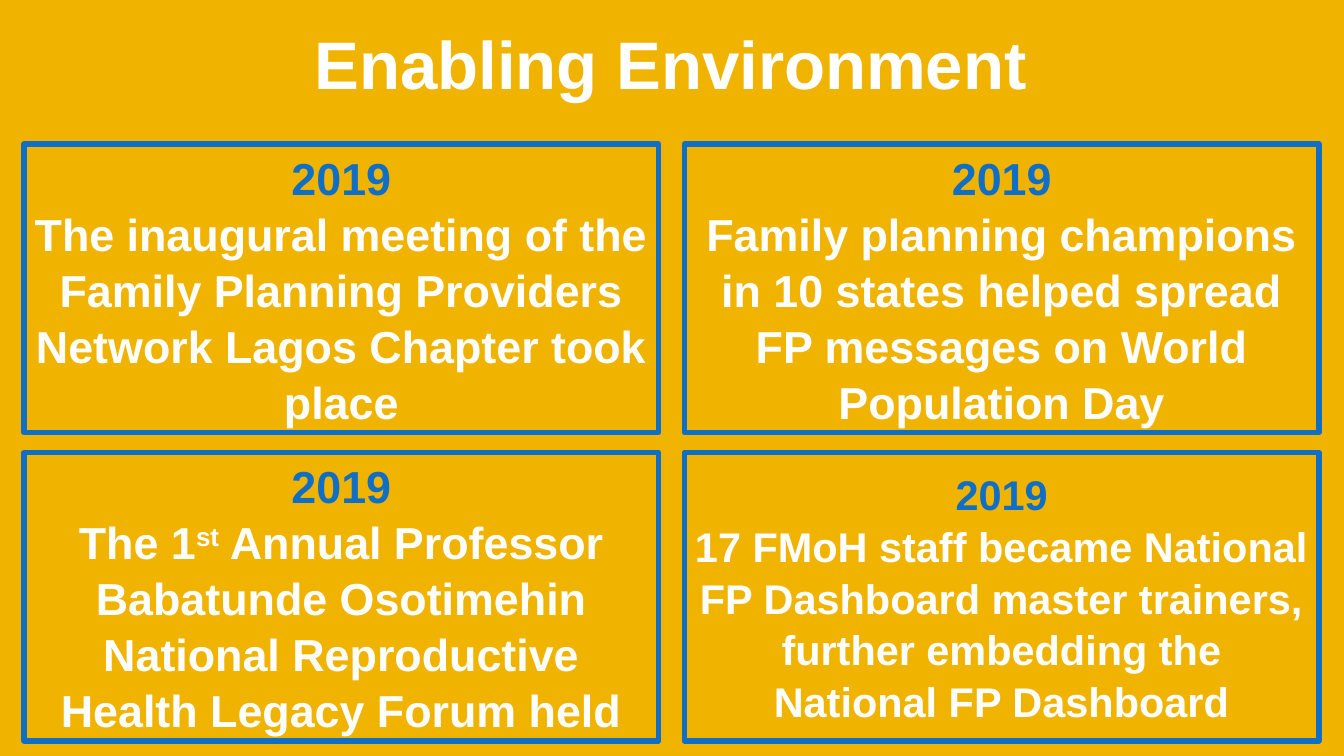
from pptx import Presentation
from pptx.dml.color import RGBColor
from pptx.enum.shapes import MSO_SHAPE
from pptx.enum.text import MSO_ANCHOR, PP_ALIGN
from pptx.util import Inches, Pt

COLORS = {"gold": "F0B300", "blue": "0F6FC6", "white": "FFFFFF"}
TITLE = "Enabling Environment"
YEAR = "2019"
# Cards in reading order: text size, then text pieces; every second piece is raised
CARDS = [
    (32, ["The inaugural meeting of the Family Planning Providers "
          "Network Lagos Chapter took place"]),
    (32, ["Family planning champions in 10 states helped spread "
          "FP messages on World Population Day"]),
    (32, ["The 1", "st", " Annual Professor Babatunde Osotimehin "
          "National Reproductive Health Legacy Forum held"]),
    (29.6, ["17 FMoH staff became National FP Dashboard master trainers, "
            "further embedding the National FP Dashboard"]),
]
LEFT, TOP = 0.24, 1.43
WIDTH, HEIGHT = 6.29, 2.86
STEP_X, STEP_Y = 6.55, 3.06


def color(name):
    return RGBColor.from_string(COLORS[name])


def style(para, size, name):
    font = para.font
    font.name, font.size, font.bold = "Arial", Pt(size), True
    font.color.rgb = color(name)


def add_title(slide):
    box = slide.shapes.add_textbox(Inches(3.02), Inches(0.17), Inches(7.3), Inches(0.91))
    box.text_frame.word_wrap = True
    para = box.text_frame.paragraphs[0]
    para.text = TITLE
    style(para, 48, "white")


def add_card(slide, index, size, pieces):
    row, col = divmod(index, 2)
    card = slide.shapes.add_shape(
        MSO_SHAPE.RECTANGLE, Inches(LEFT + col * STEP_X), Inches(TOP + row * STEP_Y),
        Inches(WIDTH), Inches(HEIGHT))
    card.shadow.inherit = False
    card.fill.solid()
    card.fill.fore_color.rgb = color("gold")
    card.line.color.rgb = color("blue")
    card.line.width = Pt(4)
    frame = card.text_frame
    frame.word_wrap = True
    frame.vertical_anchor = MSO_ANCHOR.MIDDLE
    head, body = frame.paragraphs[0], frame.add_paragraph()
    head.text = YEAR
    for i, piece in enumerate(pieces):
        run = body.add_run()
        run.text = piece
        if i % 2:
            run.font._element.set("baseline", "30000")
    for para, name in ((head, "blue"), (body, "white")):
        para.alignment = PP_ALIGN.CENTER
        para.line_spacing = 1.04
        style(para, size, name)


def main():
    deck = Presentation()
    deck.slide_width, deck.slide_height = Inches(13.33), Inches(7.5)
    slide = deck.slides.add_slide(deck.slide_layouts[6])
    slide.background.fill.solid()
    slide.background.fill.fore_color.rgb = color("gold")
    add_title(slide)
    for index, (size, pieces) in enumerate(CARDS):
        add_card(slide, index, size, pieces)
    deck.save("out.pptx")


if __name__ == "__main__":
    main()
